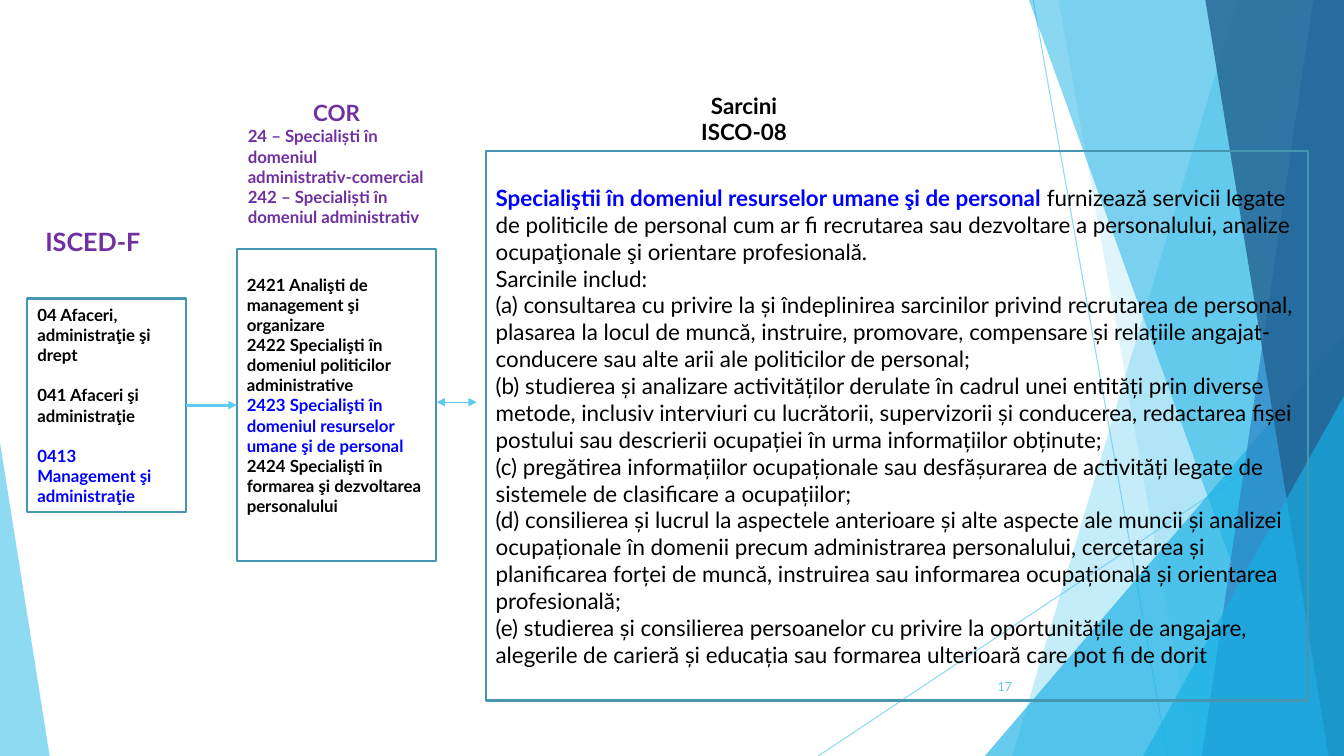
"""Build the slide that links ISCED-F fields, COR occupations and ISCO-08 tasks."""
from dataclasses import dataclass

from pptx import Presentation
from pptx.dml.color import RGBColor
from pptx.enum.shapes import MSO_CONNECTOR, MSO_SHAPE
from pptx.enum.text import MSO_ANCHOR, PP_ALIGN
from pptx.oxml.ns import qn
from pptx.util import Pt

RECTANGLE = MSO_SHAPE.RECTANGLE
TRIANGLE = MSO_SHAPE.ISOSCELES_TRIANGLE
STRAIGHT = MSO_CONNECTOR.STRAIGHT
MIDDLE = MSO_ANCHOR.MIDDLE
LEFT, CENTER, RIGHT = PP_ALIGN.LEFT, PP_ALIGN.CENTER, PP_ALIGN.RIGHT


@dataclass(frozen=True)
class Theme:
    font: str = "Lato"
    white: str = "FFFFFF"
    black: str = "000000"
    highlight: str = "0000FF"
    heading: str = "7030A0"
    border: str = "4696B1"
    sky: str = "5FCBEF"
    cyan: str = "17B0E4"
    blue: str = "2E83C3"
    navy: str = "226292"
    number_size: float = 9
    code_size: float = 12
    body_size: float = 16
    title_size: float = 18
    line_gap: float = 14.4
    border_width: float = 1.5


THEME = Theme()

SHARDS = [
    (884, 723, THEME.sky, 36),
    (756, 852, THEME.sky, 20),
    (703.5, 240, 256.5, 300, 1, THEME.cyan, 66),
    (735, 929.5, THEME.cyan, 50),
    (938, 858.5, THEME.blue, 70),
    (861, 949, THEME.navy, 80),
    (816.5, 283, 143.5, 257, 1, THEME.cyan, 66),
    (0, 316, 35.5, 224, 0, THEME.sky, 70),
]
RAYS = [(738, 0, 834, 540), (960, 290, 584.5, 540)]

FIELDS = [
    ("04 Afaceri, administraţie şi drept", THEME.black),
    ("041 Afaceri şi administraţie", THEME.black),
    ("0413 Management şi administraţie", THEME.highlight),
]
OCCUPATIONS = [
    ("2421 Analişti de management şi organizare", THEME.black),
    ("2422 Specialişti în domeniul politicilor administrative", THEME.black),
    ("2423 Specialişti în domeniul resurselor umane şi de personal", THEME.highlight),
    ("2424 Specialişti în formarea şi dezvoltarea personalului", THEME.black),
]
GROUPS = [
    "24 – Specialiști în domeniul administrativ-comercial",
    "242 – Specialiști în domeniul administrativ",
]
TASK_LEAD = "Specialiştii în domeniul resurselor umane şi de personal"
TASK_INTRO = (
    " furnizează servicii legate de politicile de personal cum ar fi recrutarea sau "
    "dezvoltare a personalului, analize ocupaţionale şi orientare profesională."
)
TASKS = [
    "Sarcinile includ:",
    "(a) consultarea cu privire la și îndeplinirea sarcinilor privind recrutarea de personal, "
    "plasarea la locul de muncă, instruire, promovare, compensare și relațiile "
    "angajat-conducere sau alte arii ale politicilor de personal;",
    "(b) studierea și analizare activităților derulate în cadrul unei entități prin diverse "
    "metode, inclusiv interviuri cu lucrătorii, supervizorii și conducerea, redactarea fișei "
    "postului sau descrierii ocupației în urma informațiilor obținute;",
    "(c) pregătirea informațiilor ocupaționale sau desfășurarea de activități legate de "
    "sistemele de clasificare a ocupațiilor;",
    "(d) consilierea și lucrul la aspectele anterioare și alte aspecte ale muncii și analizei "
    "ocupaționale în domenii precum administrarea personalului, cercetarea și planificarea "
    "forței de muncă, instruirea sau informarea ocupațională și orientarea profesională;",
    "(e) studierea și consilierea persoanelor cu privire la oportunitățile de angajare, "
    "alegerile de carieră și educația sau formarea ulterioară care pot fi de dorit",
]


def apply(target, values):
    """Set every attribute in values on target."""
    for name, value in values.items():
        setattr(target, name, value)


def set_opacity(shape, percent):
    """Make the first colour of a shape partly transparent."""
    color = shape._element.spPr.find(".//" + qn("a:srgbClr"))
    alpha = color.makeelement(qn("a:alpha"), {"val": str(percent * 1000)})
    color.append(alpha)


def paint(shape, color):
    """Give a shape a plain fill without outline or shadow."""
    shape.shadow.inherit = False
    shape.line.fill.background()
    shape.fill.solid()
    shape.fill.fore_color.rgb = RGBColor.from_string(color)


def add_line(slide, start, end, width, arrows=()):
    """Draw a straight line with triangles at the named ends."""
    line = slide.shapes.add_connector(STRAIGHT, *map(Pt, start + end))
    line.line.color.rgb = RGBColor.from_string(THEME.sky)
    line.line.width = Pt(width)
    properties = line._element.spPr
    properties.append(properties.makeelement(qn("a:effectLst"), {}))
    outline = properties.find(qn("a:ln"))
    for name in arrows:
        outline.append(outline.makeelement(qn(name), {"type": "triangle"}))
    return line


def write(shape, paragraphs, gap=0):
    """Fill a shape with paragraphs, each an alignment and a list of runs."""
    frame = shape.text_frame
    apply(frame, {"word_wrap": True, "vertical_anchor": MIDDLE})
    for index, (alignment, runs) in enumerate(paragraphs):
        paragraph = frame.add_paragraph() if index else frame.paragraphs[0]
        spacing = {"space_before": Pt(gap)} if index and gap else {}
        apply(paragraph, {"alignment": alignment, **spacing})
        for text, size, color, bold in runs:
            run = paragraph.add_run()
            run.text = text
            apply(run.font, {"name": THEME.font, "size": Pt(size), "bold": bold})
            run.font.color.rgb = RGBColor.from_string(color)


def add_label(slide, box, lines, size, color, alignment=CENTER, bold=True):
    """Place free-standing lines of text in a box."""
    label = slide.shapes.add_textbox(*map(Pt, box))
    write(label, [(alignment, [(line, size, color, bold)]) for line in lines])


def add_frame(slide, box):
    """Draw an outlined rectangle without fill."""
    frame = slide.shapes.add_shape(RECTANGLE, *map(Pt, box))
    frame.shadow.inherit = False
    frame.fill.background()
    frame.line.color.rgb = RGBColor.from_string(THEME.border)
    frame.line.width = Pt(THEME.border_width)
    return frame


def draw_background(slide, box):
    """Draw the rays and translucent shards along the slide edges."""
    left, top, width, height = box
    for x1, y1, x2, y2 in RAYS:
        set_opacity(add_line(slide, (left + x1, top + y1), (left + x2, top + y2), 0.75), 70)
    for *geometry, color, opacity in SHARDS:
        if len(geometry) == 2:
            upper, lower = geometry
            builder = slide.shapes.build_freeform(Pt(left + upper), Pt(top))
            corners = [(width, 0), (width, height), (lower, height)]
            builder.add_line_segments([(Pt(left + x), Pt(top + y)) for x, y in corners])
            shard = builder.convert_to_shape()
        else:
            x, y, wide, high, apex = geometry
            shard = slide.shapes.add_shape(TRIANGLE, Pt(left + x), Pt(top + y), Pt(wide), Pt(high))
            shard.adjustments[0] = apex
        paint(shard, color)
        set_opacity(shard, opacity)


def draw_fields(slide, box):
    """Draw the ISCED-F column."""
    left, top, width, height = box
    add_label(slide, (left, top, 93.6, 42.5), ["ISCED-F"], THEME.title_size, THEME.heading)
    frame = add_frame(slide, (left, top + 62, width, height - 62))
    lines = [(LEFT, [(text, THEME.code_size, color, True)]) for text, color in FIELDS]
    write(frame, lines, THEME.line_gap)


def draw_occupations(slide, box):
    """Draw the COR column."""
    left, top, width, height = box
    header = slide.shapes.add_shape(RECTANGLE, Pt(left + 0.7), Pt(top), Pt(141), Pt(105))
    paint(header, THEME.white)
    title = (CENTER, [("COR", THEME.body_size, THEME.heading, True)])
    groups = [(LEFT, [(text, THEME.code_size, THEME.heading, True)]) for text in GROUPS]
    write(header, [title] + groups)
    frame = add_frame(slide, (left, top + 114, width, height - 114))
    frame.text_frame.margin_bottom = Pt(3.6 + THEME.line_gap)
    write(frame, [(LEFT, [(text, THEME.code_size, color, True)]) for text, color in OCCUPATIONS])


def draw_tasks(slide, box):
    """Draw the ISCO-08 task column."""
    left, top, width, height = box
    size = THEME.body_size
    add_label(slide, (left + 114, top, 141, 42.5), ["Sarcini", "ISCO-08"], size, THEME.black)
    frame = add_frame(slide, (left, top + 44.6, width, height - 44.6))
    lead = [(TASK_LEAD, size, THEME.highlight, True), (TASK_INTRO, size, THEME.black, False)]
    tasks = [(LEFT, [(text, size, THEME.black, False)]) for text in TASKS]
    write(frame, [(LEFT, lead)] + tasks)


def main():
    """Assemble and save the slide."""
    presentation = Presentation()
    apply(presentation, {"slide_width": Pt(960), "slide_height": Pt(540)})
    slide = presentation.slides.add_slide(presentation.slide_layouts[6])
    draw_background(slide, (0, 0, 960, 540))
    add_label(slide, (676, 476, 54, 28.8), ["17"], THEME.number_size, THEME.sky, RIGHT, False)
    draw_fields(slide, (19.6, 151.2, 113.2, 214.6))
    draw_tasks(slide, (347, 63.4, 587.5, 437))
    draw_occupations(slide, (169.2, 64, 142.4, 337))
    add_line(slide, (133.2, 289.4), (169.2, 289.4), 0, ["a:tailEnd"])
    add_line(slide, (311.8, 287.3), (340.6, 287.3), 1, ["a:headEnd", "a:tailEnd"])
    presentation.save("out.pptx")


if __name__ == "__main__":
    main()
